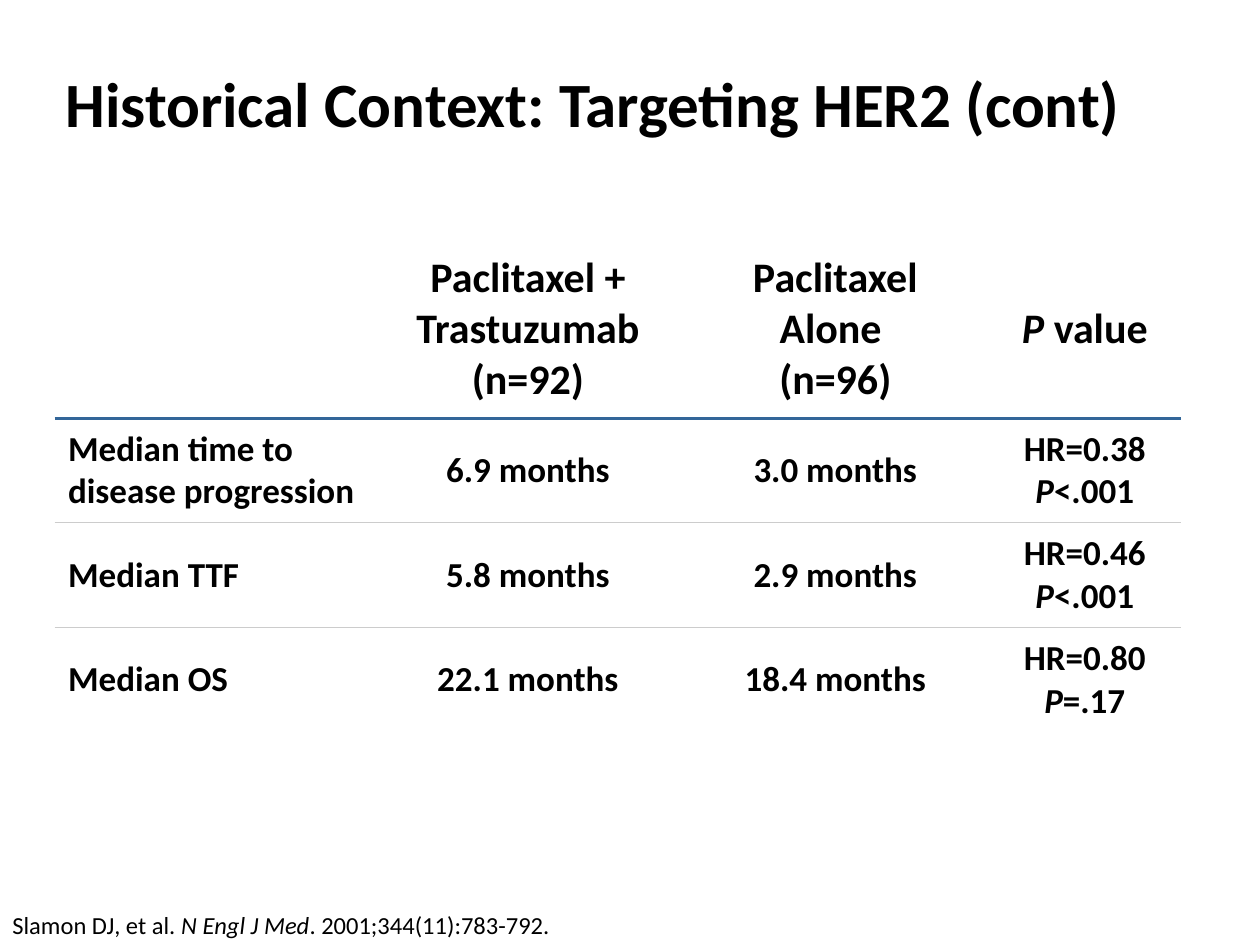
from pptx import Presentation
from pptx.dml.color import RGBColor
from pptx.enum.text import MSO_ANCHOR, MSO_AUTO_SIZE, PP_ALIGN
from pptx.oxml import parse_xml
from pptx.oxml.ns import nsdecls
from pptx.util import Inches, Pt

LEFT, CENTER = PP_ALIGN.LEFT, PP_ALIGN.CENTER
MIDDLE = MSO_ANCHOR.MIDDLE
FIT_SHAPE = MSO_AUTO_SIZE.SHAPE_TO_FIT_TEXT
HEADER_RULE = ("336699", 2.25)
ROW_RULE = ("CCCCCC", 0.75)


def write(frame, paragraphs, size, bold=True, align=LEFT):
    """Fill a text frame; *stars* mark italics and \\n a line break."""
    font_format = {"name": "Calibri", "size": Pt(size), "bold": bold}
    for index, text in enumerate(paragraphs):
        paragraph = frame.add_paragraph() if index else frame.paragraphs[0]
        paragraph.alignment = align
        for line_number, line in enumerate(text.split("\n")):
            if line_number:
                paragraph.add_line_break()
            for part_number, part in enumerate(line.split("*")):
                if not part:
                    continue
                run = paragraph.add_run()
                run.text = part
                for key, value in font_format.items():
                    setattr(run.font, key, value)
                run.font.italic = part_number % 2 == 1
                run.font.color.rgb = RGBColor.from_string("000000")


def add_border(cell, side, rule):
    color, width = rule
    cell._tc.get_or_add_tcPr().append(parse_xml(
        f'<a:{side} {nsdecls("a")} w="{Pt(width)}"><a:solidFill>'
        f'<a:srgbClr val="{color}"/></a:solidFill></a:{side}>'))


prs = Presentation()
prs.slide_width, prs.slide_height = Inches(10), Inches(7.5)
slide = prs.slides.add_slide(prs.slide_layouts[5])

title = slide.shapes.title
title.left, title.top = Inches(0.42), Inches(0.3)
title.width, title.height = Inches(9.08), Inches(1.03)
title.text_frame.vertical_anchor = MIDDLE
write(title.text_frame, ["Historical Context: Targeting HER2 (cont)"], 36)

outcomes = [
    [[], ["Paclitaxel + Trastuzumab", "(n=92)"],
     ["Paclitaxel\nAlone \n(n=96)"], ["*P* value"]],
    [["Median time to disease progression"], ["6.9 months"],
     ["3.0 months"], ["HR=0.38", "*P*<.001"]],
    [["Median TTF"], ["5.8 months"], ["2.9 months"], ["HR=0.46", "*P*<.001"]],
    [["Median OS"], ["22.1 months"], ["18.4 months"], ["HR=0.80", "*P*=.17"]],
]
column_widths = [2.53, 2.44, 2.44, 1.52]
row_heights = [1.41, 0.83, 0.83, 0.83]
row_rules = [HEADER_RULE, ROW_RULE, ROW_RULE]

table = slide.shapes.add_table(
    len(row_heights), len(column_widths), Inches(0.44), Inches(1.91),
    Inches(sum(column_widths)), Inches(sum(row_heights))).table
table.horz_banding = False
for column, width in zip(table.columns, column_widths):
    column.width = Inches(width)
for r, (row, height) in enumerate(zip(table.rows, row_heights)):
    row.height = Inches(height)
    for c, cell in enumerate(row.cells):
        if r > 0:
            add_border(cell, "lnT", row_rules[r - 1])
        if r < len(row_rules):
            add_border(cell, "lnB", row_rules[r])
        cell.fill.solid()
        cell.fill.fore_color.rgb = RGBColor.from_string("FFFFFF")
        cell.vertical_anchor = MIDDLE
        write(cell.text_frame, outcomes[r][c], 20 if r else 24,
              align=CENTER if c else LEFT)

citation = slide.shapes.add_textbox(
    Inches(0), Inches(7.17), Inches(4.5), Inches(0.34)).text_frame
citation.word_wrap = False
citation.auto_size = FIT_SHAPE
write(citation, ["Slamon DJ, et al. *N Engl J Med*. 2001;344(11):783-792."],
      14, bold=False)

prs.save("out.pptx")
